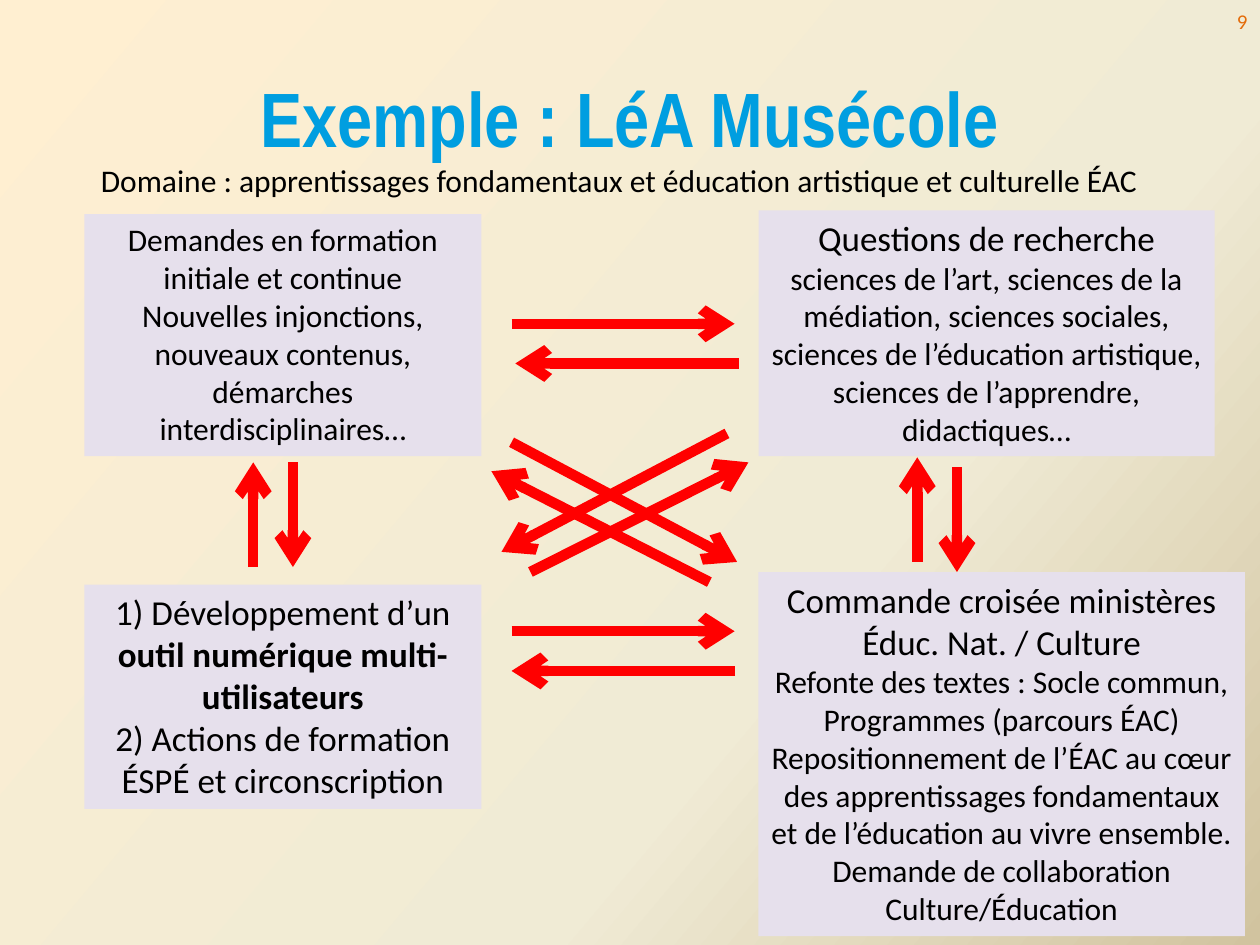
from copy import deepcopy

from lxml.etree import SubElement
from pptx import Presentation
from pptx.dml.color import RGBColor
from pptx.enum.shapes import MSO_CONNECTOR, MSO_SHAPE
from pptx.enum.text import MSO_ANCHOR, PP_ALIGN
from pptx.oxml.ns import qn
from pptx.util import Inches, Pt

COLORS = {
    "cream": "FFEFD1", "ivory": "F0EBD5", "sand": "D1C39F",
    "title": "009EE0", "number": "E46C0A", "box": "E6E0EC",
    "text": "000000", "arrow": "FF0000",
}
COLUMNS, ROWS = 100, 75


def color(name):
    """Return the named palette colour."""
    return RGBColor.from_string(COLORS[name])


def span(text, size=18, bold=False, font="Calibri", ink="text"):
    """Describe a piece of text and its format."""
    return {"text": text, "size": size, "bold": bold, "font": font, "ink": ink}


class Board:
    """Draw styled elements on one slide laid out on a fine grid."""

    def __init__(self, deck):
        """Add a blank page to the deck."""
        self.page = deck.slides.add_slide(deck.slide_layouts[6])
        self.column = deck.slide_width / COLUMNS
        self.row = deck.slide_height / ROWS

    def place(self, x, y):
        """Convert grid columns and rows to slide lengths."""
        return round(x * self.column), round(y * self.row)

    def background(self, stops, angle):
        """Fill the page with a gradient running at a clockwise angle."""
        fill = self.page.background.fill
        fill.gradient()
        fill.gradient_angle = 360 - angle
        stop_list = self.page.element.find(".//" + qn("a:gsLst"))
        while len(stop_list) < len(stops):
            stop_list.append(deepcopy(stop_list[-1]))
        for stop, (position, name) in zip(fill.gradient_stops, stops):
            stop.color.rgb = color(name)
            stop.position = position

    def set_text(self, shape, paragraphs, align, anchor):
        """Put paragraphs of spans into a shape."""
        frame = shape.text_frame
        frame.word_wrap = True
        frame.vertical_anchor = anchor
        for index, spans in enumerate(paragraphs):
            para = frame.add_paragraph() if index else frame.paragraphs[0]
            para.alignment = align
            for part in spans:
                for number, line in enumerate(part["text"].split("\n")):
                    if number:
                        para.add_line_break()
                    run = para.add_run()
                    run.text = line
                    run.font.name = part["font"]
                    run.font.size = Pt(part["size"])
                    run.font.bold = part["bold"]
                    run.font.color.rgb = color(part["ink"])

    def label(self, x, y, width, height, *paragraphs, align=PP_ALIGN.CENTER, anchor=MSO_ANCHOR.TOP):
        """Add plain text without a frame."""
        shape = self.page.shapes.add_textbox(*self.place(x, y), *self.place(width, height))
        self.set_text(shape, paragraphs, align, anchor)

    def box(self, x, y, width, height, *paragraphs):
        """Add a filled box of centred text."""
        shape = self.page.shapes.add_shape(
            MSO_SHAPE.RECTANGLE, *self.place(x, y), *self.place(width, height))
        shape.shadow.inherit = False
        shape.fill.solid()
        shape.fill.fore_color.rgb = color("box")
        shape.line.fill.background()
        self.set_text(shape, paragraphs, PP_ALIGN.CENTER, MSO_ANCHOR.TOP)

    def arrow(self, start, end):
        """Add a thick arrow between two grid points."""
        line = self.page.shapes.add_connector(
            MSO_CONNECTOR.STRAIGHT, *self.place(*start), *self.place(*end))
        line.line.width = Pt(6)
        line.line.color.rgb = color("arrow")
        properties = line.element.spPr
        SubElement(properties.find(qn("a:ln")), qn("a:tailEnd"), type="arrow")
        SubElement(properties, qn("a:effectLst"))


def main():
    """Build the slide and save it."""
    deck = Presentation()
    deck.slide_width, deck.slide_height = Inches(10), Inches(7.5)
    board = Board(deck)
    board.background([(0, "cream"), (0.65, "ivory"), (1, "sand")], 40)

    board.label(5, 3, 90, 12.5,
                [span("Exemple : LéA Musécole", size=44, bold=True, font="Arial Narrow", ink="title")],
                anchor=MSO_ANCHOR.MIDDLE)
    board.label(76.7, 0.2, 23.3, 4, [span("9", size=12, ink="number")], align=PP_ALIGN.RIGHT)

    left, right = 6.7, 60.2
    board.box(left, 17, 31.5, 19.2,
              [span("Demandes en formation initiale et continue")],
              [span("Nouvelles injonctions, nouveaux contenus, démarches interdisciplinaires…")])
    board.box(right, 16.7, 36.2, 19.5,
              [span("Questions de recherche ", size=20),
               span("sciences de l’art, sciences de la médiation, sciences sociales, "
                    "sciences de l’éducation artistique, sciences de l’apprendre, didactiques…")])
    board.box(right, 45.4, 38.6, 28.9,
              [span("Commande croisée ministères\nÉduc. Nat. / Culture", size=20)],
              [span("Refonte des textes : Socle commun, Programmes (parcours ÉAC)")],
              [span("Repositionnement de l’ÉAC au cœur des apprentissages fondamentaux "
                    "et de l’éducation au vivre ensemble. "
                    "Demande de collaboration Culture/Éducation")])
    board.box(left, 46.4, 31.5, 17.8,
              [span("1) Développement d’un ", size=20),
               span("outil numérique multi-utilisateurs", size=20, bold=True)],
              [span("2) Actions de formation ÉSPÉ et circonscription", size=20)])

    for y, back in ((25.7, 40.9), (50.1, 40.6)):
        board.arrow((40.6, y), (58.3, y))
        board.arrow((back + 17.75, y + 3.15), (back, y + 3.15))
    for x, up, down in ((20.1, 36.7, 36.7), (72.8, 36.3, 37.1)):
        board.arrow((x, up + 8.3), (x, up))
        board.arrow((x + 3.15, down), (x + 3.15, down + 8.3))
    for start, end in (((56.3, 46.2), (39, 37.4)), ((40.6, 35.1), (58.5, 44.6)),
                       ((42.1, 45.4), (59.4, 36.7)), ((57.7, 34.4), (39.8, 43.8))):
        board.arrow(start, end)

    board.label(3.5, 12.3, 91.3, 4,
                [span("Domaine : apprentissages fondamentaux et éducation artistique et culturelle ÉAC")])
    deck.save("out.pptx")


if __name__ == "__main__":
    main()
